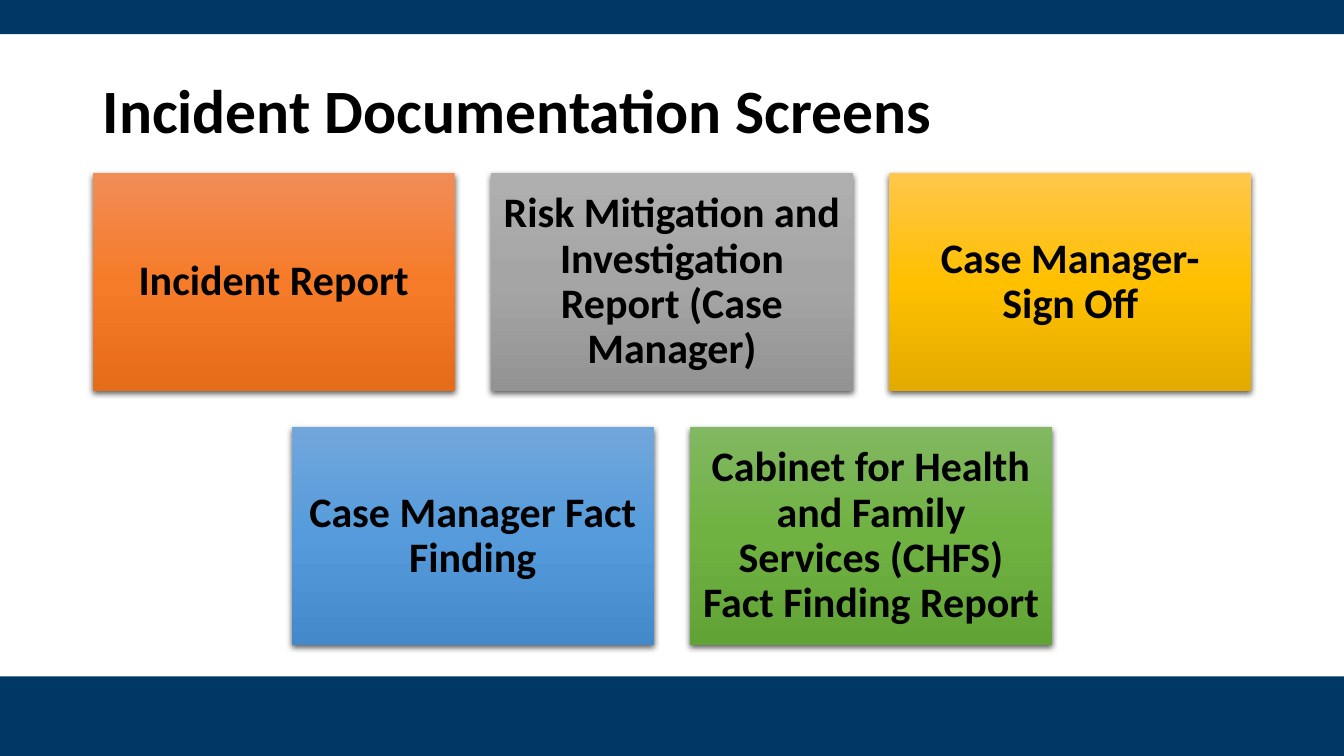
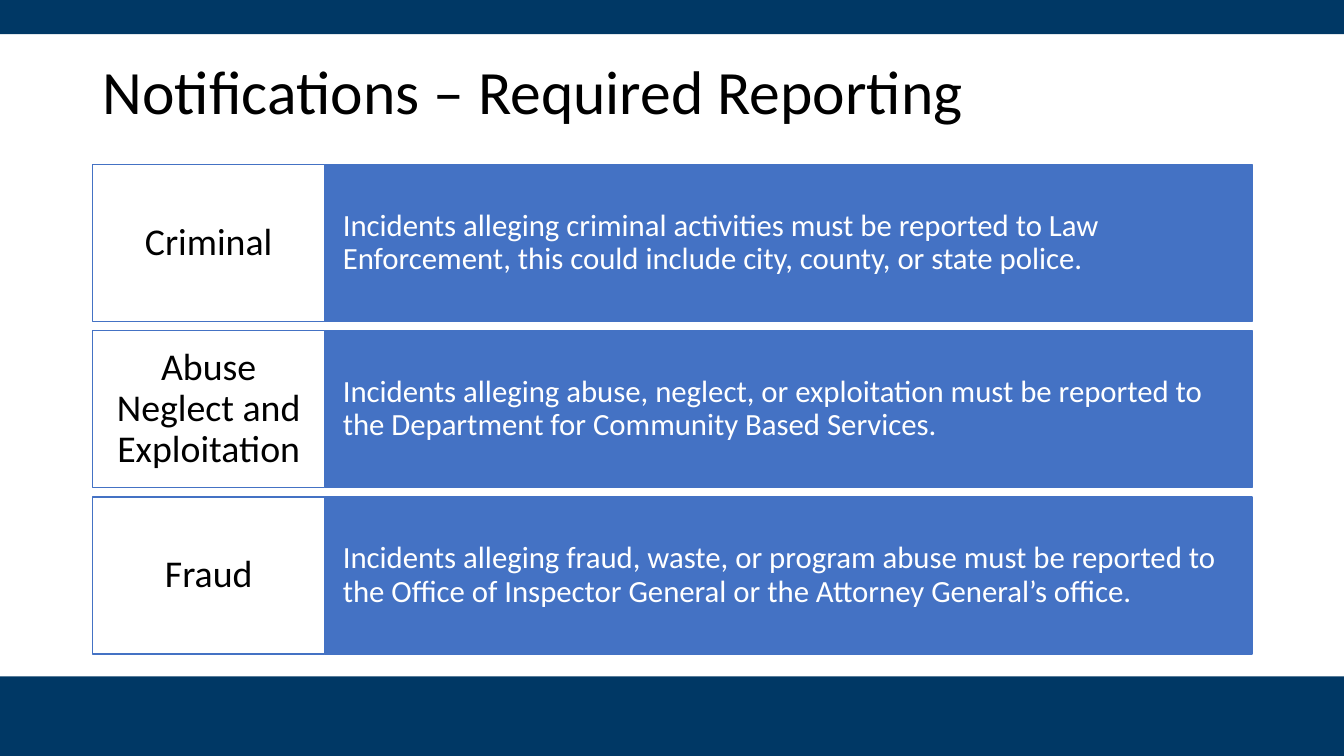
import copy

import pptx
import pptx.dml.color
import pptx.enum.shapes
import pptx.enum.text
import pptx.oxml
import pptx.oxml.ns
import pptx.util

Inches, Pt = pptx.util.Inches, pptx.util.Pt
ALIGN = pptx.enum.text.PP_ALIGN

# Shared style
WIDTH, HEIGHT = 13.33, 7.5
FONT = "Calibri"
NAVY, BLUE, BLACK, WHITE = "003865", "4472C4", "000000", "FFFFFF"
BANDS = [(6.71, 0.79), (0, 0.34)]  # top, height
LEFT, CONTENT_WIDTH = 0.92, 11.5

# Content of slide 1: rows of tiles, each with text and gradient colours
SCREENS_TITLE = "Incident Documentation Screens"
SCREENS = [
    [
        ("Incident Report", ("F18C57", "F67B28", "E56C19")),
        ("Risk Mitigation and Investigation Report (Case Manager)",
         ("AFAFAF", "A5A5A5", "939393")),
        ("Case Manager- Sign Off", ("FFC64B", "FFC000", "E3AB00")),
    ],
    [
        ("Case Manager Fact Finding", ("71A6DB", "559BDB", "448ACA")),
        ("Cabinet for Health and Family Services (CHFS) Fact Finding Report",
         ("81B861", "6FB242", "62A336")),
    ],
]
TILE_TOP, TILE_W, TILE_H, TILE_GAP = 1.72, 3.59, 2.16, 0.36

# Content of slide 2: incident type and where it must be reported
REPORTING_TITLE = "Notifications – Required Reporting"
REPORTING = [
    ("Criminal",
     "Incidents alleging criminal activities must be reported to Law "
     "Enforcement, this could include city, county, or state police."),
    ("Abuse Neglect and Exploitation",
     "Incidents alleging abuse, neglect, or exploitation must be reported to "
     "the Department for Community Based Services."),
    ("Fraud",
     "Incidents alleging fraud, waste, or program abuse must be reported to "
     "the Office of Inspector General or the Attorney General’s office."),
]
ROW_TOP, ROW_H, ROW_PITCH, TYPE_W = 1.63, 1.56, 1.65, 2.3


def rgb(color):
    return pptx.dml.color.RGBColor.from_string(color)


def add_rect(slide, left, top, width, height, fill=None, line=None):
    sp = slide.shapes.add_shape(
        pptx.enum.shapes.MSO_SHAPE.RECTANGLE,
        Inches(left), Inches(top), Inches(width), Inches(height))
    sp.shadow.inherit = False
    if fill:
        sp.fill.solid()
        sp.fill.fore_color.rgb = rgb(fill)
    if line:
        sp.line.color.rgb = rgb(line)
        sp.line.width = Pt(1)
    else:
        sp.line.fill.background()
    return sp


def set_text(sp, text, size, color=BLACK, bold=False, align=ALIGN.CENTER,
             inset=(0.12, 0.12)):
    tf = sp.text_frame
    tf.word_wrap = True
    tf.vertical_anchor = pptx.enum.text.MSO_ANCHOR.MIDDLE
    tf.margin_left = tf.margin_right = Inches(inset[0])
    tf.margin_top = tf.margin_bottom = Inches(inset[1])
    p = tf.paragraphs[0]
    p.text = text
    p.alignment = align
    p.line_spacing = 0.9
    p.font.name = FONT
    p.font.size = Pt(size)
    p.font.bold = bold
    p.font.color.rgb = rgb(color)


def set_gradient(sp, colors):
    """Fill from top to bottom with three evenly spaced colours."""
    sp.fill.gradient()
    sp.fill.gradient_angle = 270
    stops = sp._element.spPr.find(".//" + pptx.oxml.ns.qn("a:gsLst"))
    stops.insert(1, copy.deepcopy(stops[0]))
    for i, (stop, color) in enumerate(zip(sp.fill.gradient_stops, colors)):
        stop.position = i / 2
        stop.color.rgb = rgb(color)


def add_shadow(sp):
    effects = sp._element.spPr.find(pptx.oxml.ns.qn("a:effectLst"))
    effects.append(pptx.oxml.parse_xml(
        f'<a:outerShdw {pptx.oxml.ns.nsdecls("a")} blurRad="{Pt(4.5)}" '
        f'dist="{Pt(1.5)}" dir="5400000" algn="ctr" rotWithShape="0">'
        f'<a:srgbClr val="{BLACK}"><a:alpha val="63000"/></a:srgbClr>'
        '</a:outerShdw>'))


def add_slide(prs, title, title_height, bold):
    slide = prs.slides.add_slide(prs.slide_layouts[6])
    for top, height in BANDS:
        add_rect(slide, 0, top, WIDTH, height, NAVY)
    box = slide.shapes.add_textbox(
        Inches(LEFT), Inches(0.4), Inches(CONTENT_WIDTH), Inches(title_height))
    set_text(box, title, 44, bold=bold, align=ALIGN.LEFT, inset=(0.1, 0.05))
    return slide


def build_screens(prs):
    slide = add_slide(prs, SCREENS_TITLE, 1.45, True)
    for r, tiles in enumerate(SCREENS):
        # Each row is centred on the slide
        row_width = len(tiles) * (TILE_W + TILE_GAP) - TILE_GAP
        row_left = (WIDTH - row_width) / 2
        top = TILE_TOP + r * (TILE_H + TILE_GAP)
        for c, (text, colors) in enumerate(tiles):
            left = row_left + c * (TILE_W + TILE_GAP)
            sp = add_rect(slide, left, top, TILE_W, TILE_H)
            set_gradient(sp, colors)
            add_shadow(sp)
            set_text(sp, text, 30, bold=True)


def build_reporting(prs):
    slide = add_slide(prs, REPORTING_TITLE, 1.07, False)
    for i, (kind, rule) in enumerate(REPORTING):
        top = ROW_TOP + i * ROW_PITCH
        sp = add_rect(slide, LEFT + TYPE_W, top, CONTENT_WIDTH - TYPE_W, ROW_H,
                      BLUE, BLUE)
        set_text(sp, rule, 22, WHITE, align=ALIGN.LEFT, inset=(0.18, 0.4))
        sp = add_rect(slide, LEFT, top, TYPE_W, ROW_H, WHITE, BLUE)
        set_text(sp, kind, 27, inset=(0.12, 0.15))


def main():
    prs = pptx.Presentation()
    prs.slide_width, prs.slide_height = Inches(WIDTH), Inches(HEIGHT)
    build_screens(prs)
    build_reporting(prs)
    prs.save("out.pptx")


if __name__ == "__main__":
    main()
